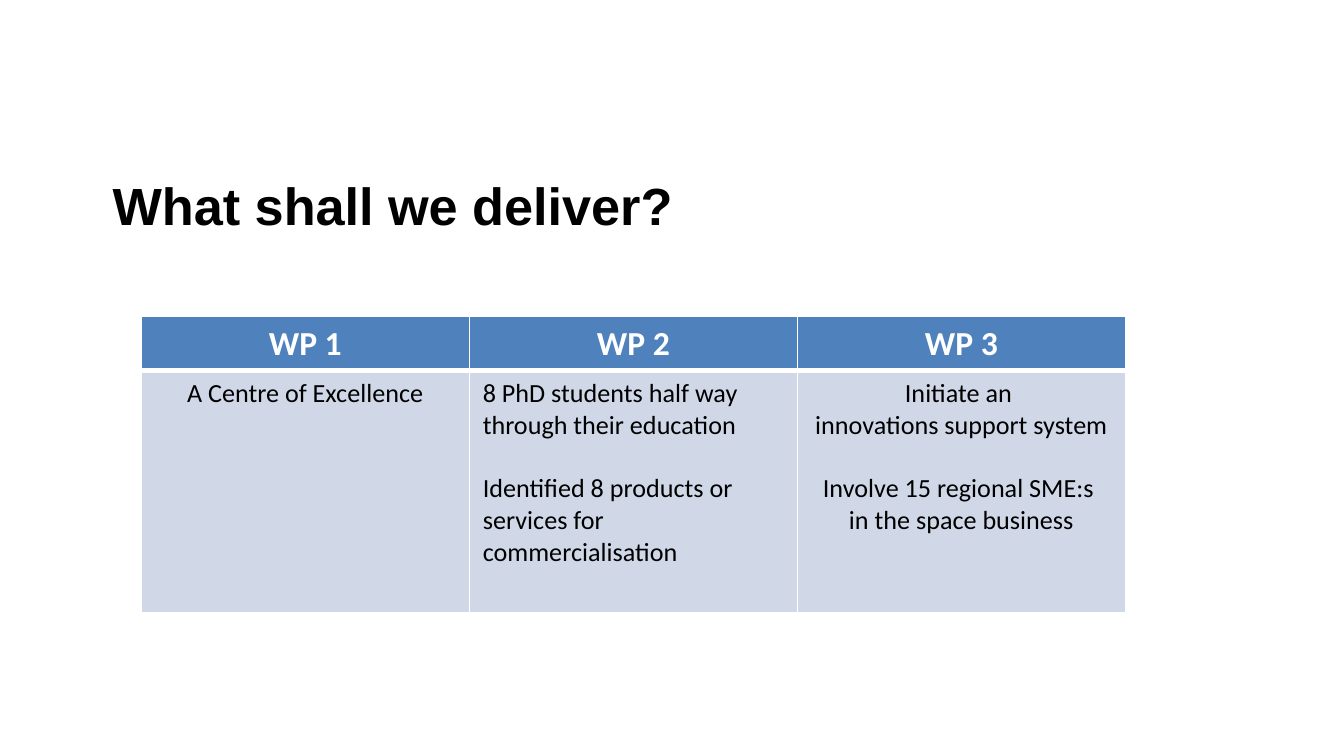
"""Build the deliverables slide with one column per work package."""
from lxml.etree import SubElement
from pptx import Presentation
from pptx.dml.color import RGBColor
from pptx.enum.text import MSO_ANCHOR, PP_ALIGN
from pptx.oxml.ns import qn
from pptx.util import Cm, Pt

BLACK = RGBColor(0x00, 0x00, 0x00)
WHITE = RGBColor(0xFF, 0xFF, 0xFF)
HEADER_BLUE = RGBColor(0x4F, 0x81, 0xBD)
BODY_BLUE = RGBColor(0xD0, 0xD8, 0xE8)

TITLE = "What shall we deliver?"
WORK_PACKAGES = [
    ("WP 1", PP_ALIGN.CENTER, [["A Centre of Excellence"]]),
    ("WP 2", PP_ALIGN.LEFT, [
        ["8 PhD students half way through their education"],
        ["Identified 8 products or services for commercialisation"],
    ]),
    ("WP 3", PP_ALIGN.CENTER, [
        ["Initiate an ", "innovations support system"],
        ["Involve 15 regional SME:s \vin the space business"],
    ]),
]

TITLE_FONT = {"name": "Arial", "size": Pt(28), "bold": True}
HEADER_FONT = {"name": "Calibri", "size": Pt(18), "bold": True}
BODY_FONT = {"name": "Calibri", "size": Pt(14), "bold": False}
GROUP_GAP = Pt(17)
COLUMN_WIDTH = Cm(6.2)
ROW_HEIGHTS = [Cm(1.03), Cm(4.58)]
THIN, THICK = Pt(1), Pt(3)


def format_font(font, values, color):
    for name, value in values.items():
        setattr(font, name, value)
    font.color.rgb = color


def add_borders(cell, top, bottom):
    properties = cell._tc.get_or_add_tcPr()
    sides = {"lnL": THIN, "lnR": THIN, "lnT": top, "lnB": bottom}
    for index, (side, width) in enumerate(sides.items()):
        line = SubElement(properties, qn(f"a:{side}"), w=str(width))
        fill = SubElement(line, qn("a:solidFill"))
        SubElement(fill, qn("a:srgbClr"), val=str(WHITE))
        properties.insert(index, line)


def fill_cell(cell, groups, alignment, font_values, color, background):
    cell.fill.solid()
    cell.fill.fore_color.rgb = background
    lines = [(text, group_index > 0 and text_index == 0)
             for group_index, group in enumerate(groups)
             for text_index, text in enumerate(group)]
    frame = cell.text_frame
    for index, (text, starts_group) in enumerate(lines):
        paragraph = frame.add_paragraph() if index else frame.paragraphs[0]
        paragraph.text = text
        paragraph.alignment = alignment
        if starts_group:
            paragraph.space_before = GROUP_GAP
        for run in paragraph.runs:
            format_font(run.font, font_values, color)


def add_title(slide):
    frame = slide.shapes.add_textbox(Cm(1.88), Cm(2.34), Cm(21.59), Cm(3.07)).text_frame
    frame.word_wrap = True
    frame.vertical_anchor = MSO_ANCHOR.MIDDLE
    paragraph = frame.paragraphs[0]
    paragraph.text = TITLE
    format_font(paragraph.runs[0].font, TITLE_FONT, BLACK)


def add_deliverables(slide):
    count = len(WORK_PACKAGES)
    table = slide.shapes.add_table(
        len(ROW_HEIGHTS), count, Cm(2.67), Cm(5.98),
        COLUMN_WIDTH * count, sum(ROW_HEIGHTS)).table
    for row, height in zip(table.rows, ROW_HEIGHTS):
        row.height = height
    for index, (heading, alignment, groups) in enumerate(WORK_PACKAGES):
        table.columns[index].width = COLUMN_WIDTH
        header, body = table.cell(0, index), table.cell(1, index)
        fill_cell(header, [[heading]], PP_ALIGN.CENTER, HEADER_FONT, WHITE, HEADER_BLUE)
        fill_cell(body, groups, alignment, BODY_FONT, BLACK, BODY_BLUE)
        add_borders(header, THIN, THICK)
        add_borders(body, THICK, THIN)


def main():
    presentation = Presentation()
    presentation.slide_width, presentation.slide_height = Cm(25.4), Cm(14.29)
    slide = presentation.slides.add_slide(presentation.slide_layouts[6])
    add_title(slide)
    add_deliverables(slide)
    presentation.save("out.pptx")


if __name__ == "__main__":
    main()
